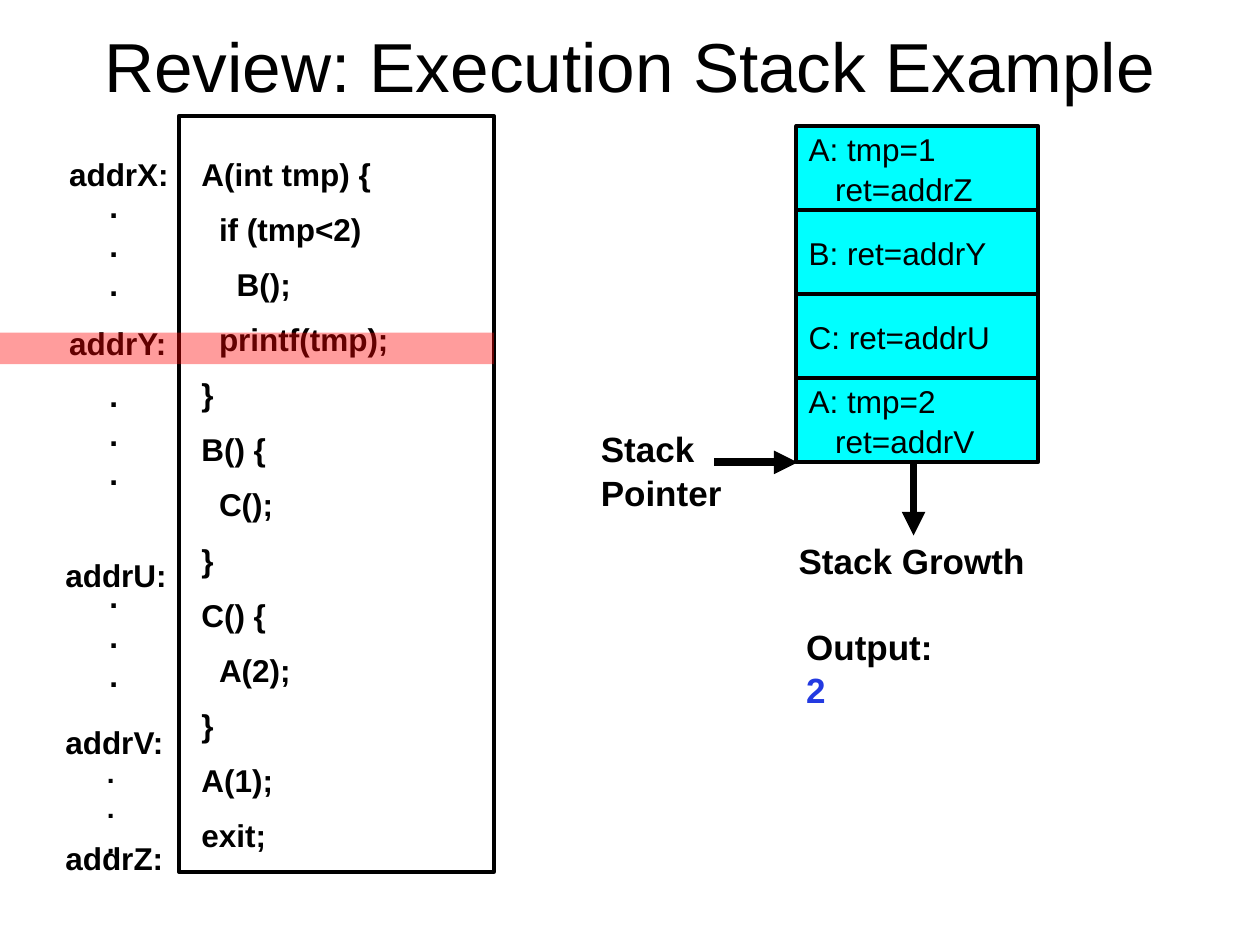
from lxml import etree
from pptx import Presentation
from pptx.dml.color import RGBColor
from pptx.enum import shapes, text
from pptx.oxml.ns import qn
from pptx.util import Inches, Pt

COLORS = {"black": "000000", "white": "FFFFFF", "cyan": "00FFFF",
          "red": "FF0000", "blue": "233AE1"}


def rgb(name):
    return RGBColor.from_string(COLORS[name])


def write(tf, lines, size=18, bold=False, color="black", before=0, spacing=1.04,
          align=text.PP_ALIGN.LEFT, anchor=text.MSO_ANCHOR.TOP, wrap=False,
          fit=text.MSO_AUTO_SIZE.NONE):
    """Each line is a string or a (string, indent in inches, colour) tuple."""
    tf.word_wrap = wrap
    tf.auto_size = fit
    tf.vertical_anchor = anchor
    for i, line in enumerate(lines):
        content, indent, tint = (line, 0, color) if isinstance(line, str) else line
        p = tf.paragraphs[0] if i == 0 else tf.add_paragraph()
        p.alignment = align
        p.line_spacing = spacing
        p.space_before = Pt(before if i else 0)
        if indent:
            p._p.get_or_add_pPr().set("marL", str(Inches(indent)))
        r = p.add_run()
        r.text = content
        r.font.name = "Arial"
        r.font.size = Pt(size)
        r.font.bold = bold
        r.font.color.rgb = rgb(tint)


class SlideBuilder:
    def __init__(self, prs, line_color="black", border=2.25, arrow=4.5):
        self.s = prs.slides.add_slide(prs.slide_layouts[5])
        self.line_color, self.border, self.arrow_width = line_color, border, arrow

    def title(self, content, x, y, w, h):
        sp = self.s.shapes.title
        sp.left, sp.top, sp.width, sp.height = map(Inches, (x, y, w, h))
        write(sp.text_frame, [content], size=39.6, spacing=1.0, wrap=True,
              align=text.PP_ALIGN.CENTER, anchor=text.MSO_ANCHOR.MIDDLE)

    def rect(self, x, y, w, h, fill, lines=(), alpha=None):
        sp = self.s.shapes.add_shape(shapes.MSO_SHAPE.RECTANGLE,
                                     *map(Inches, (x, y, w, h)))
        sp.shadow.inherit = False
        sp.fill.solid()
        sp.fill.fore_color.rgb = rgb(fill)
        if alpha is None:
            sp.line.color.rgb = rgb(self.line_color)
            sp.line.width = Pt(self.border)
        else:
            sp.line.fill.background()
            clr = sp._element.spPr.find(qn("a:solidFill"))[0]
            etree.SubElement(clr, qn("a:alpha")).set("val", str(alpha * 1000))
        if lines:
            write(sp.text_frame, lines, anchor=text.MSO_ANCHOR.MIDDLE)

    def label(self, lines, x, y, w, h, **fmt):
        sp = self.s.shapes.add_textbox(*map(Inches, (x, y, w, h)))
        write(sp.text_frame, lines, bold=True,
              fit=text.MSO_AUTO_SIZE.SHAPE_TO_FIT_TEXT, **fmt)

    def arrow(self, x1, y1, x2, y2):
        c = self.s.shapes.add_connector(shapes.MSO_CONNECTOR.STRAIGHT,
                                        *map(Inches, (x1, y1, x2, y2)))
        c.line.color.rgb = rgb(self.line_color)
        c.line.width = Pt(self.arrow_width)
        etree.SubElement(c.line._get_or_add_ln(), qn("a:tailEnd")).set("type", "triangle")
        etree.SubElement(c._element.spPr, qn("a:effectLst"))


def main():
    prs = Presentation()
    prs.slide_width, prs.slide_height = Inches(10), Inches(7.5)
    b = SlideBuilder(prs)
    b.title("Review: Execution Stack Example", 0.5, -0.11, 9, 1.25)

    # Program listing: (nesting level, code)
    code = [(0, "A(int tmp) {"), (1, "if (tmp<2)"), (2, "B();"),
            (1, "printf(tmp);"), (0, "}"), (0, "B() {"), (1, "C();"), (0, "}"),
            (0, "C() {"), (1, "A(2);"), (0, "}"), (0, "A(1);"), (0, "exit;")]
    b.rect(1.42, 0.92, 2.5, 6, "white")
    b.label([(line, level * 0.14, "black") for level, line in code],
            1.5, 1.17, 2.33, 5.86, before=9, wrap=True)

    # Stack frames, top to bottom
    frames = [("A: tmp=1", "ret=addrZ"), ("B: ret=addrY",),
              ("C: ret=addrU",), ("A: tmp=2", "ret=addrV")]
    frame_h = 2 / 3
    for i, (head, *rest) in enumerate(frames):
        b.rect(6.32, 1 + i * frame_h, 1.92, frame_h, "cyan",
               [head] + [(line, 0.21, "black") for line in rest])

    # Stack pointer and growth direction
    b.label(["Stack", "Pointer"], 4.67, 3.33, 1.17, 0.77, size=20)
    b.arrow(5.67, 3.67, 6.33, 3.67)
    b.arrow(7.25, 3.67, 7.25, 4.25)
    b.label(["Stack Growth"], 6.24, 4.22, 2.04, 0.43, size=20)

    # Code addresses and the dots between them
    for name, x, y, w in [("addrX:", 0.45, 1.17, 1), ("addrY:", 0.45, 2.51, 0.98),
                          ("addrU:", 0.42, 4.35, 1.06), ("addrV:", 0.42, 5.68, 0.99),
                          ("addrZ:", 0.42, 6.6, 0.99)]:
        b.label([name], x, y, w, 0.4)
    for x, y, h, size in [(0.77, 1.42, 1.31, 18), (0.77, 2.92, 1.31, 18),
                          (0.77, 4.52, 1.31, 18), (0.75, 5.94, 0.91, 16)]:
        b.label(["."] * 3, x, y, 0.27, h, size=size)

    # Current instruction and program output
    b.rect(0, 2.64, 3.92, 0.25, "red", alpha=39)
    b.label(["Output:", ("2", 0, "blue")], 6.3, 4.9, 1.21, 0.77, size=20)

    prs.save("out.pptx")


if __name__ == "__main__":
    main()
